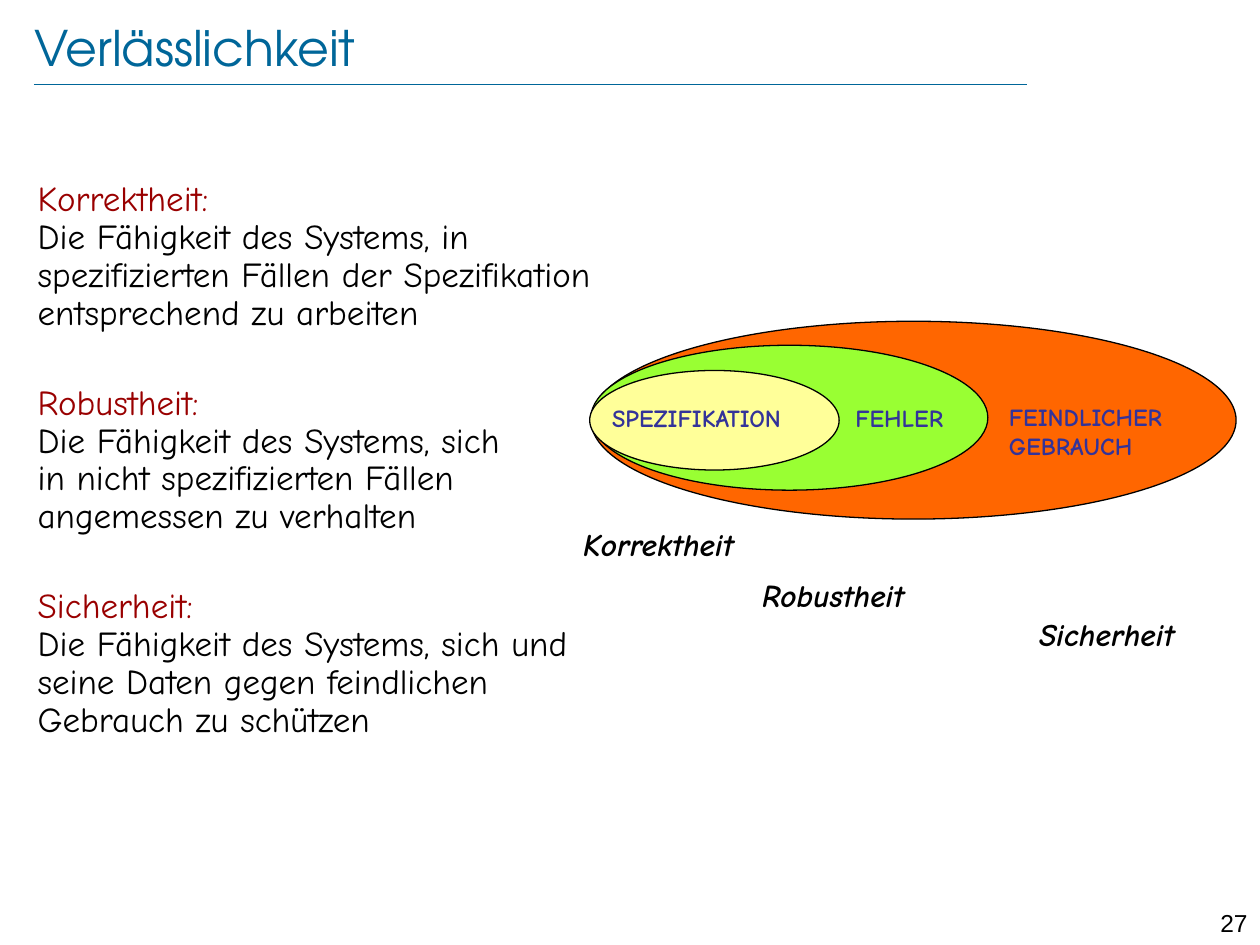
from pptx import Presentation
from pptx.dml.color import RGBColor as Rgb
from pptx.enum.shapes import MSO_CONNECTOR as Conn, MSO_SHAPE as Shape
from pptx.enum.text import MSO_ANCHOR as Anchor, PP_ALIGN as Align
from pptx.oxml.ns import qn
from pptx.util import Inches, Pt
from lxml import etree

# Content
TITLE = "Verlässlichkeit"
NUMBER = "27"
TERMS = [
    ("Korrektheit:", "Die Fähigkeit des Systems, in spezifizierten Fällen "
                     "der Spezifikation entsprechend zu arbeiten"),
    ("Robustheit:", "Die Fähigkeit des Systems, sich\nin nicht spezifizierten "
                    "Fällen angemessen zu verhalten"),
    ("Sicherheit:", "Die Fähigkeit des Systems, sich und seine Daten gegen "
                    "feindlichen Gebrauch zu schützen"),
]
# Outer to inner: ellipse box, fill, label, label box
RINGS = [
    ((4.69, 2.55, 5.12, 1.57), "orange", "FEINDLICHER GEBRAUCH", (7.91, 3.14, 1.73, 0.57)),
    ((4.69, 2.74, 3.15, 1.15), "green", "FEHLER", (6.69, 3.15, 1.1, 0.33)),
    ((4.68, 2.94, 1.98, 0.79), "yellow", "SPEZIFIKATION", (4.76, 3.15, 1.86, 0.34)),
]
GOALS = [("Korrektheit", 4.53, 4.12), ("Robustheit", 5.95, 4.52), ("Sicherheit", 8.15, 4.83)]

THEME = {
    "color": {"blue": "006699", "red": "990000", "black": "000000", "navy": "333399",
              "orange": "FF6600", "green": "99FF33", "yellow": "FFFF99"},
    "size": {"title": 28, "body": 20, "goal": 18, "label": 14},
    "font": {"title": "TeX Gyre Adventor", "body": "Comic Neue", "number": "Arial"},
}


def color(name):
    return Rgb.from_string(THEME["color"][name])


def text(slide, box, paras, size, font="body", bold=False, italic=False,
         align=Align.LEFT, anchor=Anchor.TOP, inset=None, line=None, gap=0):
    """Add a text box; each paragraph is a list of (text, color) runs."""
    frame = slide.shapes.add_textbox(*map(Inches, box)).text_frame
    frame.word_wrap = True
    frame.vertical_anchor = anchor
    if inset is not None:
        frame.margin_left = frame.margin_right = Inches(inset)
        frame.margin_top = frame.margin_bottom = Inches(inset)
    for i, runs in enumerate(paras):
        para = frame.paragraphs[0] if i == 0 else frame.add_paragraph()
        para.alignment = align
        if line:
            para.line_spacing = line
        if i:
            para.space_before = Pt(gap)
        for words, tone in runs:
            for j, part in enumerate(words.split("\n")):
                if j:
                    para.add_line_break()
                if not part:
                    continue
                run = para.add_run()
                run.text = part
                face = run.font
                face.name = THEME["font"][font]
                face.size = Pt(THEME["size"][size])
                face.bold, face.italic = bold, italic
                face.color.rgb = color(tone)


def rule(slide, x1, x2, y):
    """Add the thin line under the title."""
    line = slide.shapes.add_connector(Conn.STRAIGHT, *map(Inches, (x1, y, x2, y)))
    line.line.color.rgb = color("blue")
    line.line.width = Pt(0.25)
    etree.SubElement(line._element.spPr, qn("a:effectLst"))


def ring(slide, box, fill):
    oval = slide.shapes.add_shape(Shape.OVAL, *map(Inches, box))
    oval.shadow.inherit = False
    oval.fill.solid()
    oval.fill.fore_color.rgb = color(fill)
    oval.line.color.rgb = color("black")
    oval.line.width = Pt(0.75)


def main():
    deck = Presentation()
    deck.slide_width, deck.slide_height = Inches(10), Inches(7.5)
    slide = deck.slides.add_slide(deck.slide_layouts[6])

    # Title, rule and page number
    rule(slide, 0.27, 8.15, 0.67)
    text(slide, (9.45, 7.16, 0.55, 0.24), [[(NUMBER, "black")]], "label",
         font="number", align=Align.RIGHT)
    text(slide, (0.27, 0.13, 8.69, 0.48), [[(TITLE, "blue")]], "title",
         font="title", anchor=Anchor.MIDDLE, inset=0)

    # Definitions
    paras = [[(term + "\n", "red"), (body, "black")] for term, body in TERMS]
    text(slide, (0.2, 1.39, 4.69, 5.59), paras, "body", line=0.9, gap=30)

    # Goals below the diagram
    for goal, x, y in GOALS:
        text(slide, (x, y, 1.65, 0.4), [[(goal, "black")]], "goal", bold=True, italic=True)

    # Nested ellipses
    for box, fill, label, spot in RINGS:
        ring(slide, box, fill)
        text(slide, spot, [[(label, "navy")]], "label", bold=True)

    deck.save("out.pptx")


if __name__ == "__main__":
    main()
